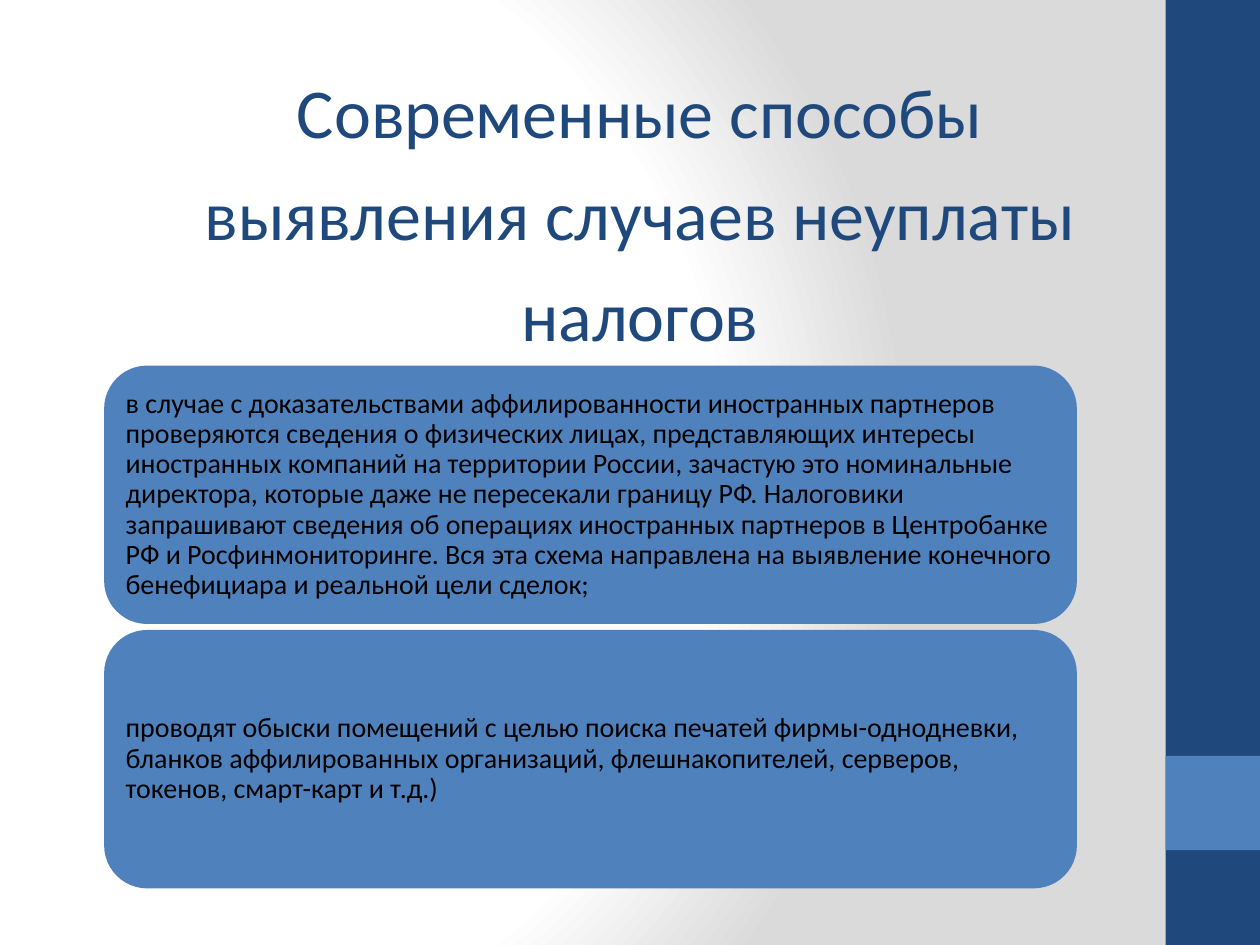
from lxml.etree import SubElement
from pptx import Presentation
from pptx.dml.color import RGBColor
from pptx.enum.shapes import MSO_SHAPE as Shape
from pptx.enum.text import MSO_ANCHOR as Anchor, PP_ALIGN as Align
from pptx.oxml.ns import qn
from pptx.util import Cm, Pt

TITLE = "Современные способы выявления случаев неуплаты налогов"
METHODS = [
    "в случае с доказательствами аффилированности иностранных партнеров проверяются "
    "сведения о физических лицах, представляющих интересы иностранных компаний на "
    "территории России, зачастую это номинальные директора, которые даже не пересекали "
    "границу РФ. Налоговики запрашивают сведения об операциях иностранных партнеров в "
    "Центробанке РФ и Росфинмониторинге. Вся эта схема направлена на выявление конечного "
    "бенефициара и реальной цели сделок;",
    "проводят обыски помещений с целью поиска печатей фирмы-однодневки, бланков "
    "аффилированных организаций, флешнакопителей, серверов, токенов, смарт-карт и т.д.)",
]
NAVY, BLUE, BLACK = "1F497D", "4F81BD", "000000"
BACKGROUND_STOPS = [(0, "FFFFFF"), (75, "FFFFFF"), (100, "DADADA")]
BACKGROUND_CENTRE = {"l": 20, "t": 50, "r": 100, "b": 50}
SIDE_BANDS = [(0, 19.05, NAVY), (15.24, 1.9, BLUE)]
BAND_LEFT, BAND_WIDTH = 23.5, 1.9
CARD_LEFT, CARD_TOP, CARD_WIDTH, CARD_HEIGHT, CARD_GAP = 2.1, 7.37, 19.61, 5.21, 0.12


def color(value):
    return RGBColor.from_string(value)


def paint_background(slide):
    slide.background.fill.gradient()
    gradient = slide.element.find(".//" + qn("a:gradFill"))
    for child in list(gradient):
        gradient.remove(child)
    stops = SubElement(gradient, qn("a:gsLst"))
    for position, value in BACKGROUND_STOPS:
        stop = SubElement(stops, qn("a:gs"), pos=str(position * 1000))
        SubElement(stop, qn("a:srgbClr"), val=value)
    circle = SubElement(gradient, qn("a:path"), {"path": "circle"})
    SubElement(circle, qn("a:fillToRect"),
               {side: str(share * 1000) for side, share in BACKGROUND_CENTRE.items()})


def add_block(slide, kind, left, top, width, height, fill):
    block = slide.shapes.add_shape(kind, Cm(left), Cm(top), Cm(width), Cm(height))
    block.shadow.inherit = False
    block.fill.solid()
    block.fill.fore_color.rgb = color(fill)
    block.line.fill.background()
    return block


def write(frame, text, size, value, align, spacing, anchor):
    frame.text = text
    frame.word_wrap = True
    frame.vertical_anchor = anchor
    paragraph = frame.paragraphs[0]
    paragraph.alignment = align
    paragraph.line_spacing = spacing
    font = paragraph.runs[0].font
    font.name, font.size = "Calibri", Pt(size)
    font.color.rgb = color(value)


def main():
    deck = Presentation()
    deck.slide_width, deck.slide_height = Cm(25.4), Cm(19.05)
    slide = deck.slides.add_slide(deck.slide_layouts[5])
    paint_background(slide)

    for top, height, fill in SIDE_BANDS:
        add_block(slide, Shape.RECTANGLE, BAND_LEFT, top, BAND_WIDTH, height, fill)

    title = slide.shapes.title
    title.left, title.top, title.width, title.height = Cm(3.5), Cm(0.91), Cm(18.8), Cm(6.4)
    write(title.text_frame, TITLE, 40, NAVY, Align.CENTER, Pt(58), Anchor.TOP)

    for row, method in enumerate(METHODS):
        top = CARD_TOP + row * (CARD_HEIGHT + CARD_GAP)
        card = add_block(slide, Shape.ROUNDED_RECTANGLE, CARD_LEFT, top,
                         CARD_WIDTH, CARD_HEIGHT, BLUE)
        frame = card.text_frame
        frame.margin_left = frame.margin_right = Cm(0.18)
        frame.margin_top = frame.margin_bottom = Cm(0.18)
        write(frame, method, 16, BLACK, Align.LEFT, 0.9, Anchor.MIDDLE)

    deck.save("out.pptx")


if __name__ == "__main__":
    main()
